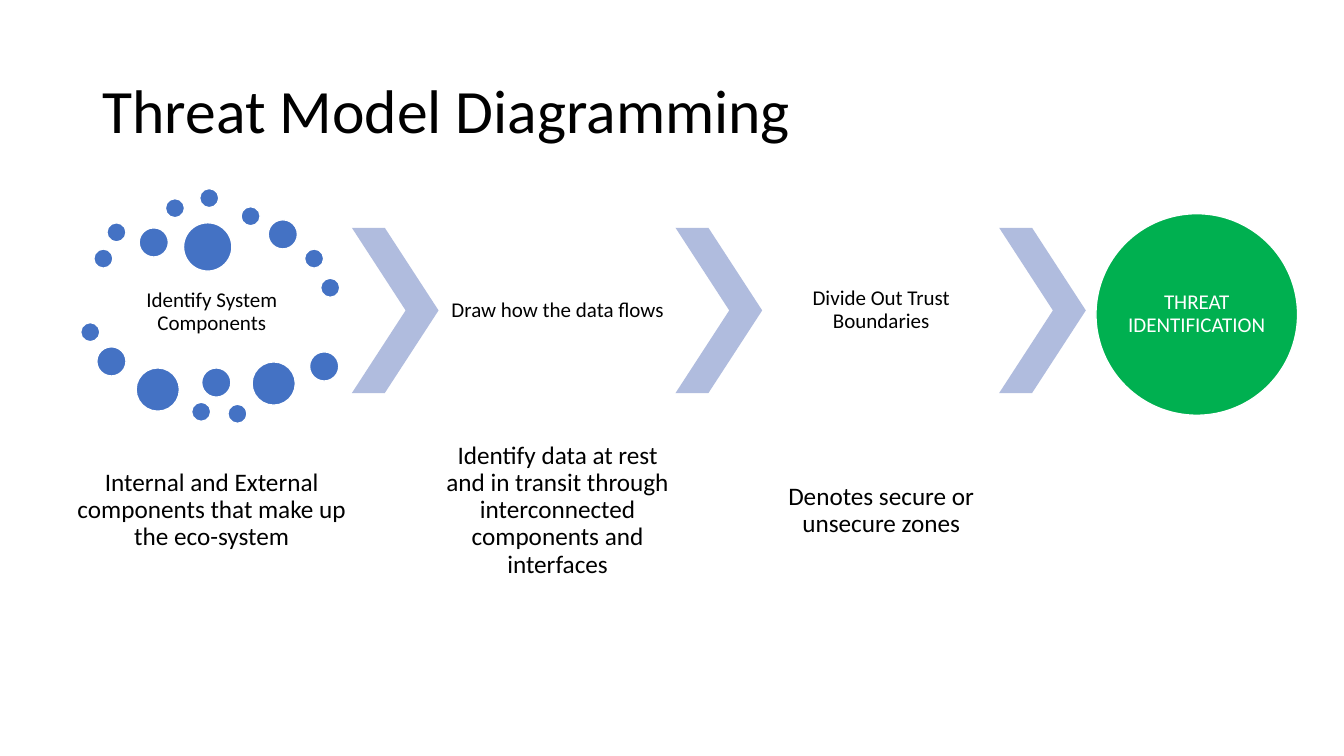
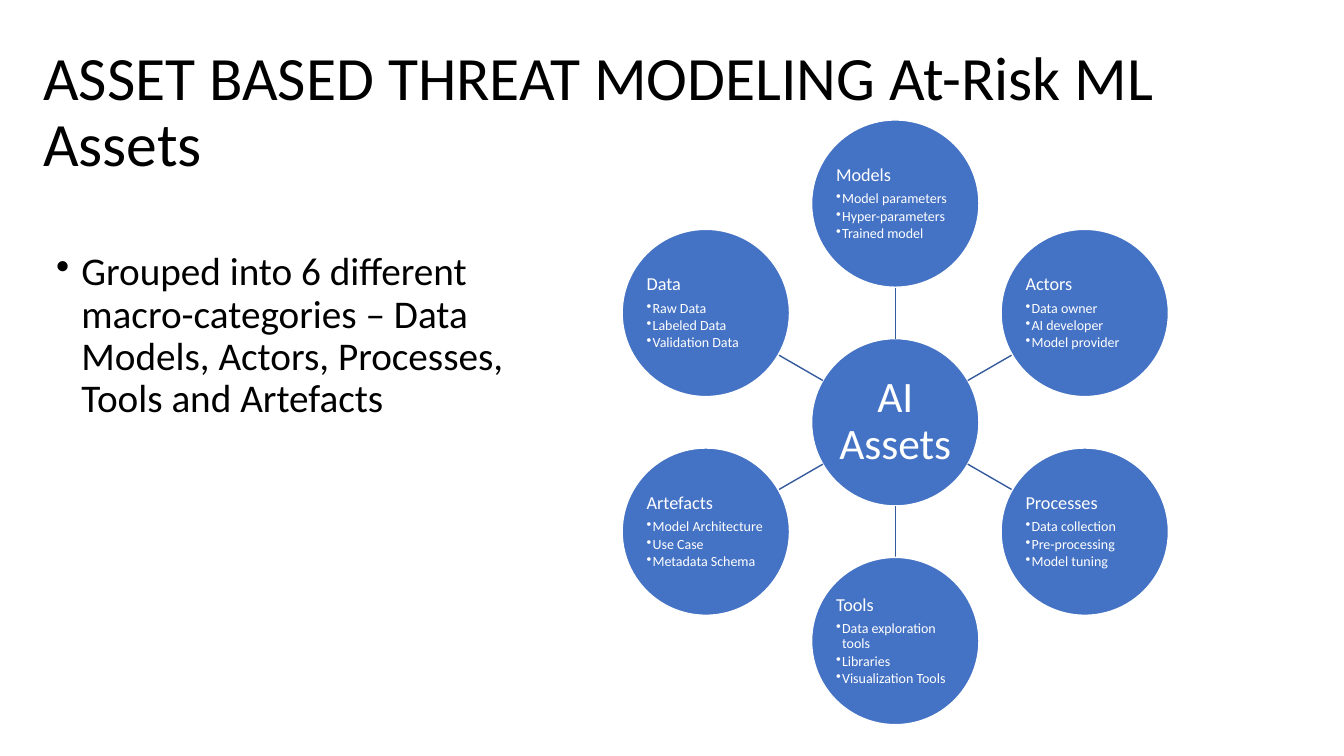
from math import cos, radians, sin

from lxml import etree
from pptx import Presentation
from pptx import util as u
from pptx.dml.color import RGBColor
from pptx.enum import shapes, text
from pptx.oxml.ns import qn

# Shared look
BLACK = RGBColor(0x00, 0x00, 0x00)
WHITE = RGBColor(0xFF, 0xFF, 0xFF)
BLUE = RGBColor(0x44, 0x72, 0xC4)
SPOKE_BLUE = RGBColor(0x36, 0x5B, 0x9D)
PALE_BLUE = RGBColor(0xB0, 0xBC, 0xDE)
GREEN = RGBColor(0x00, 0xB0, 0x50)
FONT = "Calibri"
WIDTH, HEIGHT = 13.33, 7.5
TITLE_TOP, TITLE_HEIGHT, TITLE_SIZE = 0.4, 1.45, 44
CENTER = text.PP_ALIGN.CENTER
OVAL, CHEVRON = shapes.MSO_SHAPE.OVAL, shapes.MSO_SHAPE.CHEVRON

# Process slide: label, note, column centre, note width, label middle
PROCESS_TITLE = "Threat Model Diagramming"
STEPS = [
    ("Identify System Components",
     "Internal and External components that make up the eco-system", 2.1, 2.77, 3.1),
    ("Draw how the data flows",
     "Identify data at rest and in transit through interconnected components and interfaces",
     5.53, 2.35, 3.08),
    ("Divide Out Trust Boundaries", "Denotes secure or unsecure zones", 8.74, 2.35, 3.08),
]
OUTCOME = "THREAT IDENTIFICATION"
LABEL_WIDTH, LABEL_HEIGHT = 2.35, 0.77
NOTE_TOP, NOTE_HEIGHT = 4.34, 1.45
CHEVRON_LEFT, CHEVRON_PITCH = 3.49, 3.21
# Bubble diameter: left and top of each bubble
BUBBLES = {
    0.19: [(0.93, 2.47), (1.06, 2.21), (1.64, 1.97), (1.98, 1.87), (2.39, 2.05), (3.02, 2.47),
           (3.18, 2.76), (0.8, 3.2), (1.9, 3.99), (2.26, 4.01)],
    0.29: [(1.38, 2.26), (2.66, 2.18), (0.96, 3.44), (2, 3.65), (3.07, 3.49)],
    0.43: [(1.35, 3.65), (2.5, 3.59)],
    0.48: [(1.82, 2.21)],
}

# Asset slide: categories run clockwise from the top
ASSET_TITLE = "ASSET BASED THREAT MODELING At-Risk ML Assets"
SUMMARY = ("Grouped into 6 different macro-categories – Data Models, Actors, Processes, "
           "Tools and Artefacts")
HUB = "AI Assets"
CATEGORIES = {
    "Models": ["Model parameters", "Hyper-parameters", "Trained model"],
    "Actors": ["Data owner", "AI developer", "Model provider"],
    "Processes": ["Data collection", "Pre-processing", "Model tuning"],
    "Tools": ["Data exploration tools", "Libraries", "Visualization Tools"],
    "Artefacts": ["Model Architecture", "Use Case", "Metadata Schema"],
    "Data": ["Raw Data", "Labeled Data", "Validation Data"],
}
HUB_X, HUB_Y, ORBIT, RADIUS = 8.88, 4.19, 2.17, 0.83


def inches(*lengths):
    return [u.Inches(length) for length in lengths]


def write(frame, lines, color, align=None, inset=0.0, anchor=text.MSO_ANCHOR.MIDDLE):
    """Fill a frame; each line is (words, size, space after, bullet indent)."""
    frame.word_wrap = True
    frame.vertical_anchor = anchor
    if inset is not None:
        frame.margin_left = frame.margin_right = u.Inches(inset)
        frame.margin_top = frame.margin_bottom = u.Inches(inset)
    for number, (words, size, after, indent) in enumerate(lines):
        line = frame.paragraphs[0] if number == 0 else frame.add_paragraph()
        line.text = words
        line.alignment = align or text.PP_ALIGN.LEFT
        line.line_spacing = 0.9
        line.space_after = u.Pt(after)
        if indent:
            props = line._p.get_or_add_pPr()
            props.set("marL", str(u.Inches(indent)))
            props.set("indent", str(-u.Inches(indent)))
            etree.SubElement(props, qn("a:buChar"), char="•")
        line.font.name, line.font.size = FONT, u.Pt(size)
        line.font.color.rgb = color


def add_text(slide, box, words, size, align=None, inset=None, indent=0, **options):
    frame = slide.shapes.add_textbox(*inches(*box)).text_frame
    write(frame, [(words, size, 0, indent)], BLACK, align, inset, **options)


def add_title(slide, left, width, words):
    add_text(slide, (left, TITLE_TOP, width, TITLE_HEIGHT), words, TITLE_SIZE)


def add_filled(slide, kind, box, fill, outlined=True):
    shape = slide.shapes.add_shape(kind, *inches(*box))
    shape.shadow.inherit = False
    shape.fill.solid()
    shape.fill.fore_color.rgb = fill
    if outlined:
        shape.line.color.rgb = WHITE
        shape.line.width = u.Pt(1)
    else:
        shape.line.fill.background()
    return shape


def add_disc(slide, x, y, lines, align=None):
    disc = add_filled(slide, OVAL, (x - RADIUS, y - RADIUS, 2 * RADIUS, 2 * RADIUS), BLUE)
    write(disc.text_frame, lines, WHITE, align)


def build_process(slide):
    add_title(slide, 0.92, 11.5, PROCESS_TITLE)
    for diameter, corners in BUBBLES.items():
        for left, top in corners:
            add_filled(slide, OVAL, (left, top, diameter, diameter), BLUE)
    for number, (label, note, center, note_width, middle) in enumerate(STEPS):
        add_text(slide, (center - LABEL_WIDTH / 2, middle - LABEL_HEIGHT / 2,
                         LABEL_WIDTH, LABEL_HEIGHT), label, 15, CENTER, 0.02)
        add_text(slide, (center - note_width / 2, NOTE_TOP, note_width, NOTE_HEIGHT),
                 note, 18, CENTER, 0.03)
        left = CHEVRON_LEFT + number * CHEVRON_PITCH
        arrow = add_filled(slide, CHEVRON, (left, 2.26, 0.86, 1.64), PALE_BLUE, outlined=False)
        arrow.adjustments[0] = 0.62
    outcome = add_filled(slide, OVAL, (10.87, 2.12, 2, 2), GREEN)
    write(outcome.text_frame, [(OUTCOME, 15, 0, 0)], WHITE, CENTER)


def build_assets(slide):
    add_title(slide, 0.33, 12.55, ASSET_TITLE)
    add_text(slide, (0.46, 2.45, 4.86, 4.76), SUMMARY, 28, indent=0.25,
             anchor=text.MSO_ANCHOR.TOP)
    add_disc(slide, HUB_X, HUB_Y, [(HUB, 31, 0, 0)], CENTER)
    for number, (category, assets) in enumerate(CATEGORIES.items()):
        angle = radians(number * 360 / len(CATEGORIES) - 90)

        def along(distance):
            return HUB_X + distance * cos(angle), HUB_Y + distance * sin(angle)

        # Spoke between the rims of hub and category
        spoke = slide.shapes.add_connector(
            shapes.MSO_CONNECTOR.STRAIGHT, *inches(*along(RADIUS), *along(ORBIT - RADIUS)))
        spoke.line.color.rgb = SPOKE_BLUE
        spoke.line.width = u.Pt(1)
        etree.SubElement(spoke._element.spPr, qn("a:effectLst"))
        lines = [(category, 13, 4.55, 0)] + [(asset, 10, 1.5, 0.06) for asset in assets]
        add_disc(slide, *along(ORBIT), lines)


def main():
    deck = Presentation()
    deck.slide_width, deck.slide_height = inches(WIDTH, HEIGHT)
    for build in (build_process, build_assets):
        build(deck.slides.add_slide(deck.slide_layouts[6]))
    deck.save("out.pptx")


if __name__ == "__main__":
    main()
